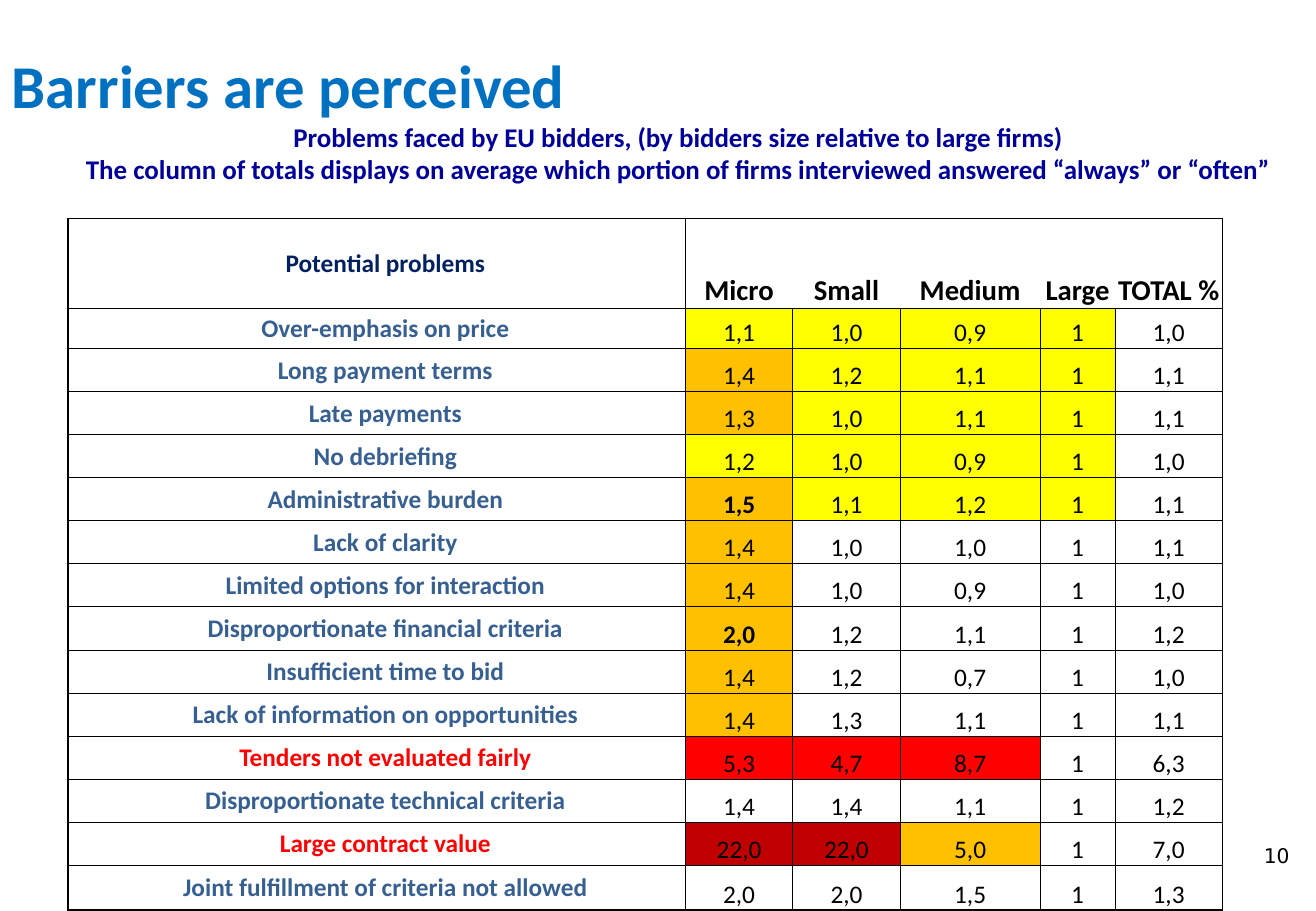
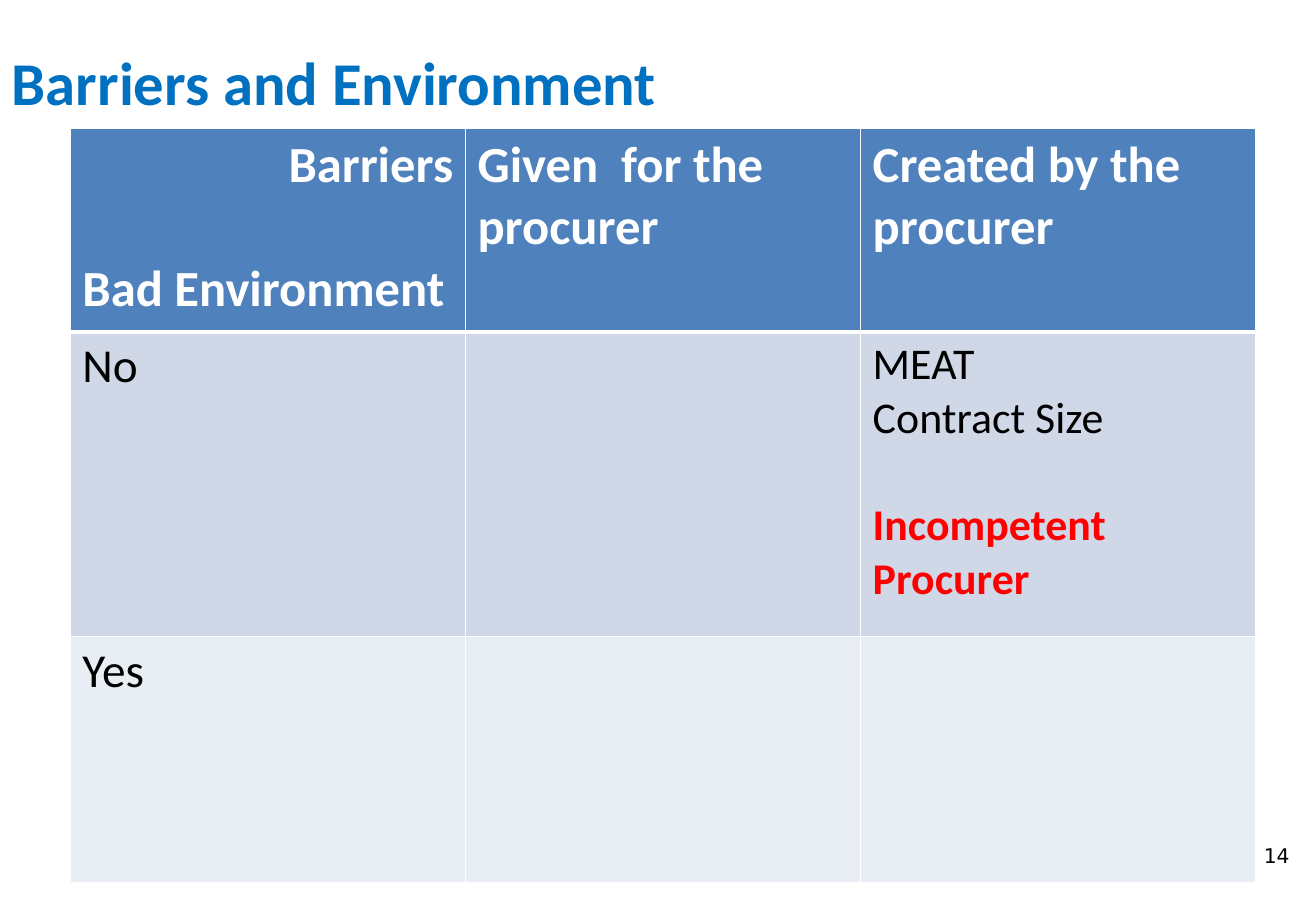
from dataclasses import dataclass, replace

from lxml.etree import SubElement
from pptx import Presentation
from pptx.dml.color import RGBColor
from pptx.enum.text import MSO_ANCHOR, PP_ALIGN
from pptx.oxml.ns import qn
from pptx.util import Cm, Pt

BLACK = RGBColor(0, 0, 0)
WHITE = RGBColor(255, 255, 255)
RED = RGBColor(255, 0, 0)
SKY = RGBColor(0x00, 0x70, 0xC0)
NAVY = RGBColor(0x00, 0x00, 0x99)
INK = RGBColor(0x00, 0x20, 0x60)
STEEL = RGBColor(0x37, 0x60, 0x91)
HEAD = RGBColor(0x4F, 0x81, 0xBD)
BAND = RGBColor(0xD0, 0xD8, 0xE8)
PALE = RGBColor(0xE9, 0xED, 0xF4)
HEAT = {
    "Y": RGBColor(255, 255, 0),
    "O": RGBColor(255, 0xC0, 0),
    "R": RED,
    "D": RGBColor(0xC0, 0, 0),
}


@dataclass
class Style:
    size: float
    color: RGBColor = BLACK
    bold: bool = False
    align: PP_ALIGN = PP_ALIGN.LEFT
    gap: float = 0
    font: str = "Calibri"


MID = PP_ALIGN.CENTER
TITLE = Style(36, SKY, True)
NOTE = Style(16, NAVY, True, MID)
PAGE = Style(12, font="DejaVu Sans")
LABEL = Style(15, STEEL, True, MID)
VALUE = Style(15, align=MID)
SIZE = Style(17, bold=True, align=MID)
TOP = Style(30, WHITE, True)
SIDE = Style(28)
ITEM = Style(26)
ALERT = Style(26, RED, True)

SIZES = ["Micro", "Small", "Medium", "Large", "TOTAL %"]
# Label, one value per size, one heat letter per value
PROBLEMS = [
    ("Over-emphasis on price", "1,1 1,0 0,9 1 1,0", "YYYY-"),
    ("Long payment terms", "1,4 1,2 1,1 1 1,1", "OYYY-"),
    ("Late payments", "1,3 1,0 1,1 1 1,1", "OYYY-"),
    ("No debriefing", "1,2 1,0 0,9 1 1,0", "YYYY-"),
    ("Administrative burden", "1,5 1,1 1,2 1 1,1", "OYYY-"),
    ("Lack of clarity", "1,4 1,0 1,0 1 1,1", "O----"),
    ("Limited options for interaction", "1,4 1,0 0,9 1 1,0", "O----"),
    ("Disproportionate financial criteria", "2,0 1,2 1,1 1 1,2", "O----"),
    ("Insufficient time to bid", "1,4 1,2 0,7 1 1,0", "O----"),
    ("Lack of information on opportunities", "1,4 1,3 1,1 1 1,1", "O----"),
    ("Tenders not evaluated fairly", "5,3 4,7 8,7 1 6,3", "RRR--"),
    ("Disproportionate technical criteria", "1,4 1,4 1,1 1 1,2", "-----"),
    ("Large contract value", "22,0 22,0 5,0 1 7,0", "DDO--"),
    ("Joint fulfillment of criteria not allowed", "2,0 2,0 1,5 1 1,3", "-----"),
]
STRONG = {"Administrative burden", "Disproportionate financial criteria"}

MATRIX = [
    (HEAD, [
        [("Barriers", replace(TOP, align=PP_ALIGN.RIGHT)),
         ("Bad Environment", replace(TOP, gap=36.6))],
        [("Given  for the procurer", TOP)],
        [("Created by the procurer", TOP)],
    ]),
    (BAND, [
        [("No", SIDE)],
        [],
        [("MEAT", ITEM), ("Contract Size", ITEM),
         ("Incompetent", replace(ALERT, gap=31.7)), ("Procurer", ALERT)],
    ]),
    (PALE, [[("Yes", SIDE)], [], []]),
]


def write(frame, lines):
    """Fill a text frame with (text, style) paragraphs."""
    for i, (text, style) in enumerate(lines):
        para = frame.paragraphs[0] if i == 0 else frame.add_paragraph()
        para.text = text
        para.alignment = style.align
        if style.gap:
            para.space_before = Pt(style.gap)
        font = para.font
        font.name, font.size, font.bold = style.font, Pt(style.size), style.bold
        font.color.rgb = style.color


def add_text(slide, box, lines, inset=True):
    frame = slide.shapes.add_textbox(*map(Cm, box)).text_frame
    frame.word_wrap = True
    frame.vertical_anchor = MSO_ANCHOR.MIDDLE
    if not inset:
        frame.margin_left = frame.margin_right = 0
        frame.margin_top = frame.margin_bottom = 0
    write(frame, lines)


def add_page(deck, title, top, height, number):
    slide = deck.slides.add_slide(deck.slide_layouts[6])
    add_text(slide, (26.42, 17.63, 1.09, 0.5), [(number, PAGE)], inset=False)
    add_text(slide, (0, top, 24.77, height), [(title, TITLE)])
    return slide


def add_grid(slide, left, top, cols, rows):
    shape = slide.shapes.add_table(
        len(rows), len(cols), Cm(left), Cm(top), Cm(sum(cols)), Cm(sum(rows)))
    grid = shape.table
    grid.first_row = grid.horz_banding = False
    for col, width in zip(grid.columns, cols):
        col.width = Cm(width)
    for row, height in zip(grid.rows, rows):
        row.height = Cm(height)
    return grid


def paint(cell, fill, color, edges):
    """Set borders, given as widths by side (0 for none), and then the fill."""
    props = cell._tc.get_or_add_tcPr()
    for side in "LRTB":
        line = SubElement(props, qn("a:ln" + side), w=str(Pt(edges[side])))
        if edges[side]:
            solid = SubElement(line, qn("a:solidFill"))
            SubElement(solid, qn("a:srgbClr"), val=str(color))
        else:
            SubElement(line, qn("a:noFill"))
    if fill is None:
        cell.fill.background()
    else:
        cell.fill.solid()
        cell.fill.fore_color.rgb = fill


def rule(row, col, last_row, last_col):
    """Thin inner lines, thick outline, open columns in the header row."""
    edges = {
        "L": 1 if col == 0 else 0.5,
        "R": 1 if col == last_col else 0.5,
        "T": 1 if row == 0 else 0.5,
        "B": 1 if row == last_row else 0.5,
    }
    if row == 0:
        edges["L"] = 1 if col < 2 else 0
        edges["R"] = 1 if col in (0, last_col) else 0
    return edges


def add_scores(slide):
    cols = [12.91, 2.24, 2.25, 2.92, 1.57, 2.24]
    rows = [1.88, 0.84] + [0.9] * 12 + [0.94]
    grid = add_grid(slide, 1.42, 4.57, cols, rows)
    table = [[("Potential problems", replace(LABEL, color=INK), None)]
             + [(name, SIZE, None) for name in SIZES]]
    for label, values, heat in PROBLEMS:
        tone = RED if heat[0] in "RD" else STEEL
        line = [(label, replace(LABEL, color=tone), None)]
        for i, (value, mark) in enumerate(zip(values.split(), heat)):
            bold = i == 0 and label in STRONG
            line.append((value, replace(VALUE, bold=bold), HEAT.get(mark)))
        table.append(line)
    for r, line in enumerate(table):
        for c, (text, style, fill) in enumerate(line):
            cell = grid.cell(r, c)
            paint(cell, fill, BLACK, rule(r, c, len(rows) - 1, len(cols) - 1))
            cell.margin_left = Cm(0.02 if c else 0.38)
            cell.margin_right = cell.margin_top = Cm(0.02)
            cell.margin_bottom = 0
            cell.vertical_anchor = MSO_ANCHOR.BOTTOM if c else MSO_ANCHOR.MIDDLE
            write(cell.text_frame, [(text, style)])


def add_matrix(slide):
    grid = add_grid(slide, 1.47, 2.69, [8.26] * 3, [4.25, 6.37, 5.15])
    for r, (fill, line) in enumerate(MATRIX):
        edges = {"L": 1, "R": 1, "T": 3 if r == 1 else 1, "B": 1 if r else 3}
        for c, lines in enumerate(line):
            cell = grid.cell(r, c)
            paint(cell, fill, WHITE, edges)
            write(cell.text_frame, lines)


def main():
    deck = Presentation()
    deck.slide_width, deck.slide_height = Cm(27.51), Cm(19.05)

    slide = add_page(deck, "Barriers are perceived", 0.79, 1.93, "10")
    add_scores(slide)
    add_text(slide, (0.86, 2.45, 26.64, 1.5), [
        ("Problems faced by EU bidders, (by bidders size relative to large firms)", NOTE),
        ("The column of totals displays on average which portion of firms "
         "interviewed answered “always” or “often”", NOTE),
    ])

    slide = add_page(deck, "Barriers and Environment", 0.61, 2.18, "14")
    add_matrix(slide)

    deck.save("out.pptx")


if __name__ == "__main__":
    main()
